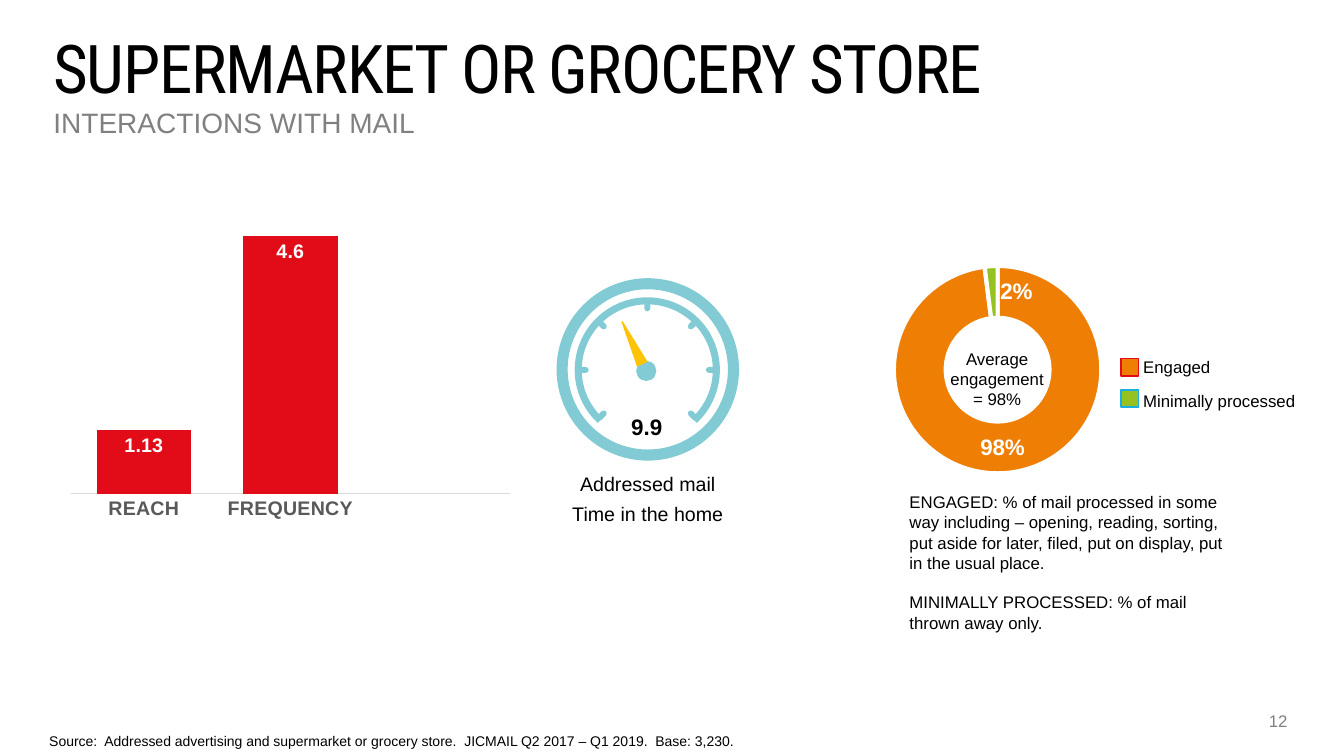
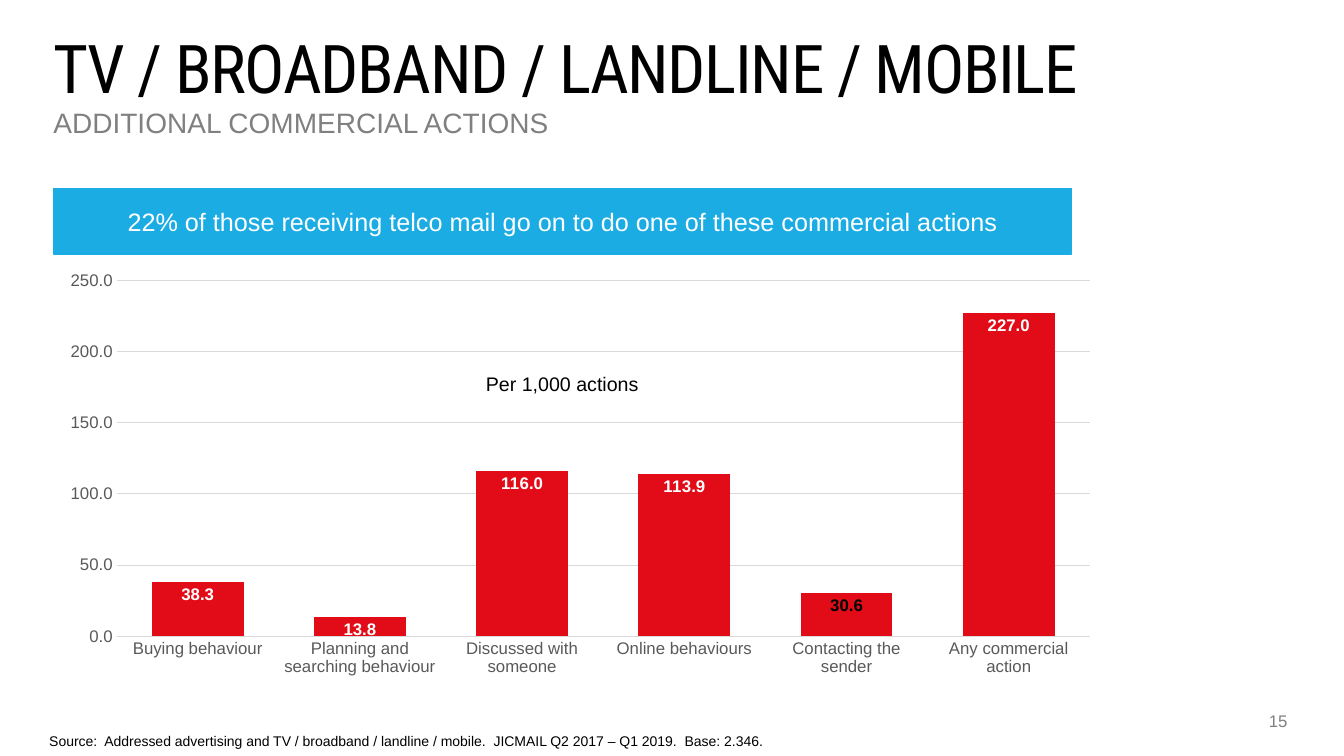
from dataclasses import dataclass
from math import cos, radians, sin

from lxml import etree
from pptx import Presentation
from pptx.chart.data import CategoryChartData
from pptx.dml.color import RGBColor
from pptx.enum.chart import XL_CHART_TYPE, XL_LABEL_POSITION, XL_TICK_MARK
from pptx.enum.shapes import MSO_SHAPE
from pptx.enum.text import MSO_ANCHOR, MSO_AUTO_SIZE, PP_ALIGN
from pptx.oxml.ns import qn
from pptx.util import Emu, Pt

COLUMN, DOUGHNUT = XL_CHART_TYPE.COLUMN_CLUSTERED, XL_CHART_TYPE.DOUGHNUT
INSIDE_END = XL_LABEL_POSITION.INSIDE_END
NO_TICK = XL_TICK_MARK.NONE
RECTANGLE, OVAL = MSO_SHAPE.RECTANGLE, MSO_SHAPE.OVAL
RING, TRIANGLE = MSO_SHAPE.DONUT, MSO_SHAPE.ISOSCELES_TRIANGLE
TOP, MIDDLE = MSO_ANCHOR.TOP, MSO_ANCHOR.MIDDLE
FIXED = MSO_AUTO_SIZE.NONE
LEFT, CENTER, RIGHT = PP_ALIGN.LEFT, PP_ALIGN.CENTER, PP_ALIGN.RIGHT
TITLE_ONLY = 5
SCALE = 9144


@dataclass(frozen=True)
class Theme:
    black: str = "000000"
    white: str = "FFFFFF"
    grey: str = "808080"
    axis_text: str = "595959"
    rule: str = "D9D9D9"
    red: str = "E20C18"
    blue: str = "1BACE4"
    teal: str = "82CBD4"
    yellow: str = "FDC304"
    orange: str = "EF7E05"
    green: str = "95C121"
    heading_font: str = "Roboto Condensed"
    body_font: str = "Arial"
    title: int = 48
    title_line: int = 44
    subtitle: int = 20
    banner: int = 18
    strong: int = 16
    label: int = 14
    body: int = 12
    source: int = 10


@dataclass(frozen=True)
class Box:
    left: int
    top: int
    width: int
    height: int

    def inner(self, left, top, width, height):
        return Box(self.left + left, self.top + top, width, height)

    def emu(self):
        return [px(n) for n in (self.left, self.top, self.width, self.height)]


THEME = Theme()


def px(length):
    return Emu(round(length * SCALE))


def rgb(colour):
    return RGBColor.from_string(colour)


def style_font(font, size, colour, bold=False, name=THEME.body_font):
    font.name, font.size, font.bold = name, Pt(size), bold
    font.color.rgb = rgb(colour)


def clear_margins(frame):
    frame.margin_left = frame.margin_right = frame.margin_top = frame.margin_bottom = 0


def add_text(page, box, text, size, colour=THEME.black, bold=False, align=LEFT,
             wrap=False, inset=True):
    frame = page.shapes.add_textbox(*box.emu()).text_frame
    frame.word_wrap = wrap
    if not inset:
        clear_margins(frame)
    frame.text = text
    for para in frame.paragraphs:
        para.alignment = align
        for span in para.runs:
            style_font(span.font, size, colour, bold)
    return frame


def paint(shape, fill, line=None):
    shape.shadow.inherit = False
    shape.fill.solid()
    shape.fill.fore_color.rgb = rgb(fill)
    if line:
        shape.line.color.rgb = rgb(line)
        shape.line.width = Pt(1)
    else:
        shape.line.fill.background()
    return shape


def add_preset(shapes, kind, box, fill, line=None):
    return paint(shapes.add_shape(kind, *box.emu()), fill, line)


def add_outline(shapes, points, fill):
    corners = [(px(x), px(y)) for x, y in points]
    builder = shapes.build_freeform(*corners[0])
    builder.add_line_segments(corners[1:], close=True)
    return paint(builder.convert_to_shape(), fill)


def add_page(deck, title, subtitle, number, source):
    page = deck.slides.add_slide(deck.slide_layouts[TITLE_ONLY])
    heading = page.shapes.title
    heading.left, heading.top, heading.width, heading.height = Box(53, 45, 1220, 52).emu()
    frame = heading.text_frame
    clear_margins(frame)
    frame.vertical_anchor, frame.auto_size, frame.word_wrap = TOP, FIXED, True
    frame.text = title
    para = frame.paragraphs[0]
    para.alignment, para.line_spacing = LEFT, Pt(THEME.title_line)
    span = para.runs[0]
    style_font(span.font, THEME.title, THEME.black, name=THEME.heading_font)
    span.font._element.set("spc", "-100")
    tagline = add_text(page, Box(53, 108, 1223, 29), subtitle, THEME.subtitle,
                       THEME.grey, wrap=True, inset=False)
    tagline.paragraphs[0].line_spacing = 0.9
    add_text(page, Box(1230, 705, 47, 20), number, THEME.body, THEME.grey,
             align=RIGHT, wrap=True, inset=False)
    add_text(page, Box(39, 722, 900, 27), source, THEME.source, wrap=True)
    return page


def add_plain_chart(page, box, kind, categories, values, number_format):
    data = CategoryChartData(number_format=number_format)
    data.categories = categories
    data.add_series("Series 1", values)
    chart = page.shapes.add_chart(kind, *box.emu(), data).chart
    chart.has_legend = chart.has_title = False
    style_font(chart.font, THEME.source, THEME.black)
    return chart


def label_values(series, size, number_format):
    labels = series.data_labels
    labels.show_value = True
    labels.number_format, labels.number_format_is_linked = number_format, False
    style_font(labels.font, size, THEME.white, True)
    return labels


def add_columns(page, box, categories, values, size, gap, top, number_format):
    chart = add_plain_chart(page, box, COLUMN, categories, values, number_format)
    plot = chart.plots[0]
    plot.gap_width, plot.vary_by_categories = gap, False
    series = plot.series[0]
    series.format.fill.solid()
    series.format.fill.fore_color.rgb = rgb(THEME.red)
    label_values(series, size, number_format).position = INSIDE_END
    axis = chart.category_axis
    axis.major_tick_mark = NO_TICK
    axis.format.line.color.rgb = rgb(THEME.rule)
    axis.format.line.width = Pt(0.75)
    style_font(axis.tick_labels.font, size, THEME.axis_text)
    scale = chart.value_axis
    scale.minimum_scale, scale.maximum_scale = 0, top
    scale.has_major_gridlines = False
    return chart


def add_reach(page, box):
    chart = add_columns(page, box, ["REACH", "FREQUENCY", ""], [1.13, 4.6, None],
                        THEME.label, 55, 5, "General")
    chart.value_axis.visible = False
    chart.category_axis.tick_labels.font.bold = True


def add_gauge(page, box):
    shapes = page.shapes.add_group_shape().shapes
    ring = add_preset(shapes, RING, box.inner(0, 0, 181, 181), THEME.teal)
    ring.adjustments[0] = 11 / 181
    middle_x, middle_y = box.left + 90, box.top + 91

    def polar(radius, angle):
        turn = radians(angle)
        return middle_x + radius * sin(turn), middle_y - radius * cos(turn)

    sweep = range(-137, 138, 2)
    arc = [polar(72, angle) for angle in sweep] + [polar(65, angle) for angle in reversed(sweep)]
    add_outline(shapes, arc, THEME.teal)
    profile = [(-3, 68), (3, 68), (3, 61), (2, 59), (0, 58), (-2, 59), (-3, 61)]
    for angle in range(-135, 136, 45):
        turn = radians(angle)
        tick = [(middle_x + x * cos(turn) + y * sin(turn),
                 middle_y + x * sin(turn) - y * cos(turn)) for x, y in profile]
        add_outline(shapes, tick, THEME.teal)
    add_preset(shapes, OVAL, box.inner(79, 82, 20, 20), THEME.teal)
    needle = add_preset(shapes, TRIANGLE, box.inner(70, 41, 10, 46), THEME.yellow, THEME.yellow)
    needle.rotation = 334.6
    add_text(page, box.inner(64, 129, 51, 37), "9.9", THEME.strong, bold=True, align=CENTER)
    for row, caption in enumerate(("Addressed mail", "Time in the home")):
        add_text(page, box.inner(5, 187 + 30 * row, 171, 34), caption, THEME.label, align=CENTER)


def add_engagement(page, box):
    chart = add_plain_chart(page, box.inner(0, 0, 333, 248), DOUGHNUT,
                            ["1", "2"], [0.98, 0.02], "0%")
    plot = chart.plots[0]
    plot.vary_by_categories = False
    series = plot.series[0]
    for index, colour in enumerate((THEME.orange, THEME.green)):
        style = series.points[index].format
        style.fill.solid()
        style.fill.fore_color.rgb = rgb(colour)
        style.line.color.rgb = rgb(THEME.white)
        style.line.width = Pt(3)
    label_values(series, THEME.strong, "0%")
    style_font(series.points[1].data_label.font, THEME.strong, THEME.white, True)
    label = series._element.find(".//" + qn("c:dLbl"))
    label.insert(1, manual_layout(x=0.07, y=0))
    number_format = etree.Element(qn("c:numFmt"), formatCode="0%", sourceLinked="0")
    label.insert(2, number_format)
    area = chart._chartSpace.find(".//" + qn("c:plotArea"))
    for old in area.findall(qn("c:layout")):
        area.remove(old)
    area.insert(0, manual_layout(layoutTarget="inner", xMode="edge", yMode="edge",
                                 x=0.19, y=0.06, w=0.62, h=0.83))
    plot._element.find(qn("c:holeSize")).set("val", "50")
    add_text(page, box.inner(105, 92, 122, 71), "Average engagement = 98%",
             THEME.body, align=CENTER, wrap=True)
    key = (("Engaged", 87, THEME.orange, THEME.red),
           ("Minimally processed", 172, THEME.green, THEME.blue))
    for row, (name, width, fill, line) in enumerate(key):
        add_preset(page.shapes, RECTANGLE, box.inner(289, 107 + 31 * row, 17, 17), fill, line)
        add_text(page, box.inner(301, 100 + 34 * row, width, 30), name, THEME.body)
    notes = add_text(
        page, box.inner(79, 239, 328, 81),
        "ENGAGED: % of mail processed in some way including – opening, reading, sorting, "
        "put aside for later, filed, put on display, put in the usual place.\n"
        "MINIMALLY PROCESSED: % of mail thrown away only.",
        THEME.body, wrap=True, inset=False)
    notes.paragraphs[1].space_before = Pt(14)


def manual_layout(**settings):
    layout = etree.Element(qn("c:layout"))
    manual = etree.SubElement(layout, qn("c:manualLayout"))
    for name, value in settings.items():
        etree.SubElement(manual, qn("c:" + name)).set("val", str(value))
    return layout


def add_banner(page, box, text):
    banner = add_preset(page.shapes, RECTANGLE, box, THEME.blue, THEME.blue)
    frame = banner.text_frame
    frame.word_wrap, frame.vertical_anchor = True, MIDDLE
    frame.text = text
    para = frame.paragraphs[0]
    para.alignment = CENTER
    style_font(para.runs[0].font, THEME.banner, THEME.white)


def add_actions(page, box):
    categories = ["Buying behaviour", "Planning and searching behaviour",
                  "Discussed with someone", "Online behaviours",
                  "Contacting the sender", "Any commercial action"]
    values = [38.3, 13.8, 116, 113.9, 30.6, 227]
    chart = add_columns(page, box, categories, values, THEME.body, 77, 250, "0.0")
    chart.plots[0].overlap = -27
    label = chart.plots[0].series[0].points[4].data_label
    style_font(label.font, THEME.body, THEME.black, True)
    label.position = INSIDE_END
    axis = chart.value_axis
    axis.major_unit, axis.major_tick_mark = 50, NO_TICK
    axis.format.line.fill.background()
    axis.has_major_gridlines = True
    axis.major_gridlines.format.line.color.rgb = rgb(THEME.rule)
    axis.major_gridlines.format.line.width = Pt(0.75)
    axis.tick_labels.number_format = "0.0"
    axis.tick_labels.number_format_is_linked = False
    style_font(axis.tick_labels.font, THEME.body, THEME.axis_text)
    add_text(page, box.inner(423, 103, 173, 34), "Per 1,000 actions", THEME.label)


def main():
    deck = Presentation()
    deck.slide_width, deck.slide_height = px(1333), px(750)
    page = add_page(
        deck, "SUPERMARKET OR GROCERY STORE", "INTERACTIONS WITH MAIL", "12",
        "Source:  Addressed advertising and supermarket or grocery store.  "
        "JICMAIL Q2 2017 – Q1 2019.  Base: 3,230.")
    add_reach(page, Box(61, 206, 454, 316))
    add_gauge(page, Box(552, 276, 181, 251))
    add_engagement(page, Box(823, 249, 473, 320))
    page = add_page(
        deck, "TV / BROADBAND / LANDLINE / MOBILE", "ADDITIONAL COMMERCIAL ACTIONS", "15",
        "Source:  Addressed advertising and TV / broadband / landline / mobile.  "
        "JICMAIL Q2 2017 – Q1 2019.  Base: 2.346.")
    add_actions(page, Box(49, 261, 1053, 418))
    add_banner(page, Box(53, 187, 1010, 65),
               "22% of those receiving telco mail go on to do one of these commercial actions")
    deck.save("out.pptx")


if __name__ == "__main__":
    main()
